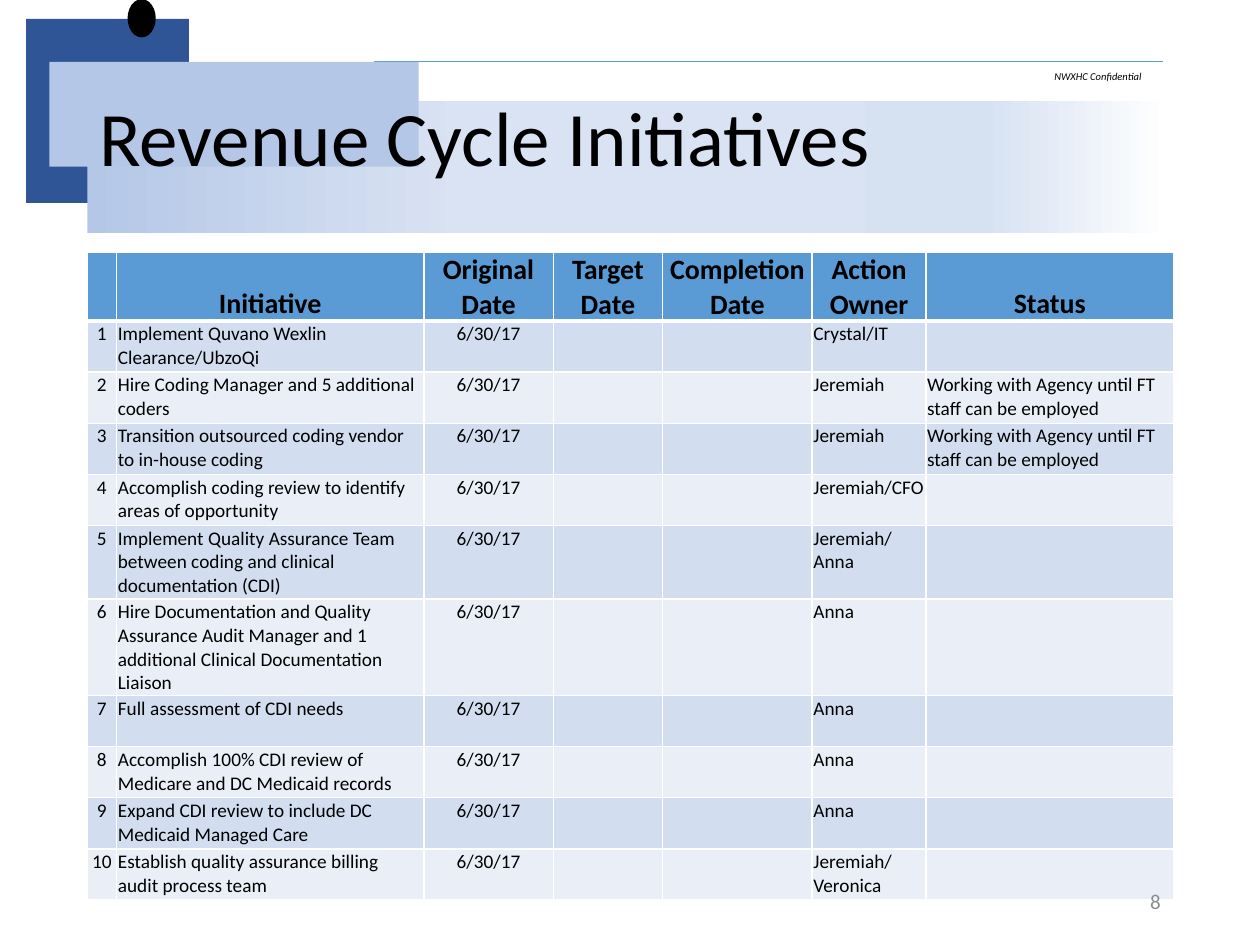
from lxml.etree import SubElement
from pptx import Presentation
from pptx.dml.color import RGBColor
from pptx.enum.shapes import MSO_CONNECTOR, MSO_SHAPE
from pptx.enum.text import MSO_ANCHOR, PP_ALIGN
from pptx.oxml import parse_xml
from pptx.oxml.ns import nsdecls, qn
from pptx.util import Pt

FONT = "Calibri"
BLACK = RGBColor(0x00, 0x00, 0x00)
WHITE = RGBColor(0xFF, 0xFF, 0xFF)
GRAY = RGBColor(0x8C, 0x8C, 0x8C)
NAVY = RGBColor(0x2F, 0x55, 0x97)
PALE_BLUE = RGBColor(0xB4, 0xC7, 0xE7)
MIST = RGBColor(0xDA, 0xE3, 0xF3)
ICE = RGBColor(0xD6, 0xE1, 0xF2)
HEADER_BLUE = RGBColor(0x5B, 0x9B, 0xD5)
BANDS = (RGBColor(0xD2, 0xDE, 0xEF), RGBColor(0xEA, 0xEF, 0xF7))

# Content: heading with column width, then initiative, owner, status
COLUMNS = [("", 17), ("Initiative", 175.5), ("Original Date", 74), ("Target Date", 62.5),
           ("Completion Date", 85.5), ("Action Owner", 65), ("Status", 141.5)]
CENTERED_COLUMNS = (0, 2, 3, 4)
ORIGINAL_DATE = "6/30/17"
AGENCY = "Working with Agency until FT staff can be employed"
INITIATIVES = [
    ("Implement Quvano Wexlin Clearance/UbzoQi", "Crystal/IT", ""),
    ("Hire Coding Manager and 5 additional coders", "Jeremiah", AGENCY),
    ("Transition outsourced coding vendor to in-house coding", "Jeremiah", AGENCY),
    ("Accomplish coding review to identify areas of opportunity", "Jeremiah/CFO", ""),
    ("Implement Quality Assurance Team between coding and clinical documentation (CDI)",
     "Jeremiah/Anna", ""),
    ("Hire Documentation and Quality Assurance Audit Manager and 1 additional "
     "Clinical Documentation Liaison", "Anna", ""),
    ("Full assessment of CDI needs", "Anna", ""),
    ("Accomplish 100% CDI review of Medicare and DC Medicaid records", "Anna", ""),
    ("Expand CDI review to include DC Medicaid Managed Care", "Anna", ""),
    ("Establish quality assurance billing audit process team", "Jeremiah/ Veronica", ""),
]
HEADER_HEIGHT, ROW_HEIGHT = 39.5, 29.2
TALL_ROWS = {5: 42, 6: 55.2}
BANNER_STOPS = [(0, PALE_BLUE), (35, MIST), (61, MIST), (83, ICE), (100, WHITE)]


def style_text(frame, size, color=BLACK, align=PP_ALIGN.LEFT, bold=False, italic=False):
    for para in frame.paragraphs:
        para.alignment = align
        for span in para.runs:
            span.font.name = FONT
            span.font.size = Pt(size)
            span.font.bold = bold
            span.font.italic = italic
            span.font.color.rgb = color


def add_block(page, kind, left, top, width, height, color):
    block = page.shapes.add_shape(kind, Pt(left), Pt(top), Pt(width), Pt(height))
    block.shadow.inherit = False
    block.fill.solid()
    block.fill.fore_color.rgb = color
    block.line.fill.background()
    return block


def add_label(page, text, left, top, width, height, size, anchor=MSO_ANCHOR.MIDDLE, **style):
    box = page.shapes.add_textbox(Pt(left), Pt(top), Pt(width), Pt(height))
    frame = box.text_frame
    frame.word_wrap = True
    frame.vertical_anchor = anchor
    frame.text = text
    style_text(frame, size, **style)
    return frame.paragraphs[0]


def fill_gradient(shape, stops):
    shape.fill.gradient()
    shape.fill.gradient_angle = 0
    stop_list = shape.fill._fill._gradFill.find(qn("a:gsLst"))
    for stop in list(stop_list):
        stop_list.remove(stop)
    for position, color in stops:
        stop = SubElement(stop_list, qn("a:gs"), pos=str(position * 1000))
        SubElement(stop, qn("a:srgbClr"), val=str(color))


def set_borders(cell, top, bottom):
    widths = {"lnL": 1, "lnR": 1, "lnT": top, "lnB": bottom}
    for index, (side, width) in enumerate(widths.items()):
        border = parse_xml(
            f'<a:{side} {nsdecls("a")} w="{Pt(width)}"><a:solidFill>'
            f'<a:srgbClr val="{WHITE}"/></a:solidFill></a:{side}>')
        cell._tc.get_or_add_tcPr().insert(index, border)


def add_initiative_table(page):
    rows = [[heading for heading, _ in COLUMNS]]
    for number, (initiative, owner, status) in enumerate(INITIATIVES, 1):
        rows.append([str(number), initiative, ORIGINAL_DATE, "", "", owner, status])
    heights = [HEADER_HEIGHT] + [TALL_ROWS.get(n, ROW_HEIGHT) for n in range(1, len(rows))]
    table = page.shapes.add_table(
        len(rows), len(COLUMNS), Pt(49.7), Pt(144),
        Pt(sum(width for _, width in COLUMNS)), Pt(sum(heights))).table
    for column, (_, width) in zip(table.columns, COLUMNS):
        column.width = Pt(width)
    for r, (values, height) in enumerate(zip(rows, heights)):
        table.rows[r].height = Pt(height)
        header = r == 0
        for c, value in enumerate(values):
            cell = table.cell(r, c)
            cell.text = value
            cell.margin_left = cell.margin_right = cell.margin_top = Pt(0.7)
            cell.margin_bottom = Pt(0)
            cell.vertical_anchor = MSO_ANCHOR.BOTTOM if header else MSO_ANCHOR.TOP
            cell.fill.solid()
            cell.fill.fore_color.rgb = HEADER_BLUE if header else BANDS[(r - 1) % 2]
            centered = header or c in CENTERED_COLUMNS
            style_text(cell.text_frame, 16 if header else 11, bold=header,
                       align=PP_ALIGN.CENTER if centered else PP_ALIGN.LEFT)
            set_borders(cell, top=3 if r == 1 else 1, bottom=3 if header else 1)


def main():
    deck = Presentation()
    deck.slide_width, deck.slide_height = Pt(720), Pt(540)
    page = deck.slides.add_slide(deck.slide_layouts[6])

    # Header decoration
    rule = page.shapes.add_connector(
        MSO_CONNECTOR.STRAIGHT, Pt(213.8), Pt(35.3), Pt(664.6), Pt(35.3))
    rule.line.color.rgb = HEADER_BLUE
    rule.line.width = Pt(0.5)
    SubElement(rule._element.spPr, qn("a:effectLst"))
    add_block(page, MSO_SHAPE.RECTANGLE, 15, 10.8, 93, 105.2, NAVY)
    dot = add_block(page, MSO_SHAPE.OVAL, 73.4, 0, 15.1, 20.9, BLACK)
    dot.line.color.rgb = BLACK
    dot.line.width = Pt(1)
    banner = add_block(page, MSO_SHAPE.RECTANGLE, 50, 57.5, 617, 75.6, PALE_BLUE)
    fill_gradient(banner, BANNER_STOPS)
    add_block(page, MSO_SHAPE.RECTANGLE, 28.3, 35.3, 211, 60, PALE_BLUE)

    # Labels and title
    notice = add_label(page, "NWXHC Confidential", 595.4, 36, 75.6, 23.8, 6,
                       anchor=MSO_ANCHOR.TOP, italic=True)
    notice.line_spacing = 1.07
    notice.space_after = Pt(6)
    title = add_label(page, "Revenue Cycle Initiatives", 49.7, 28.8, 620.6, 104.4, 44)
    title.line_spacing = 0.9

    add_initiative_table(page)

    # Page number
    add_label(page, "8", 508.3, 500.4, 162, 28.8, 12, color=GRAY, align=PP_ALIGN.RIGHT)
    deck.save("out.pptx")


if __name__ == "__main__":
    main()
